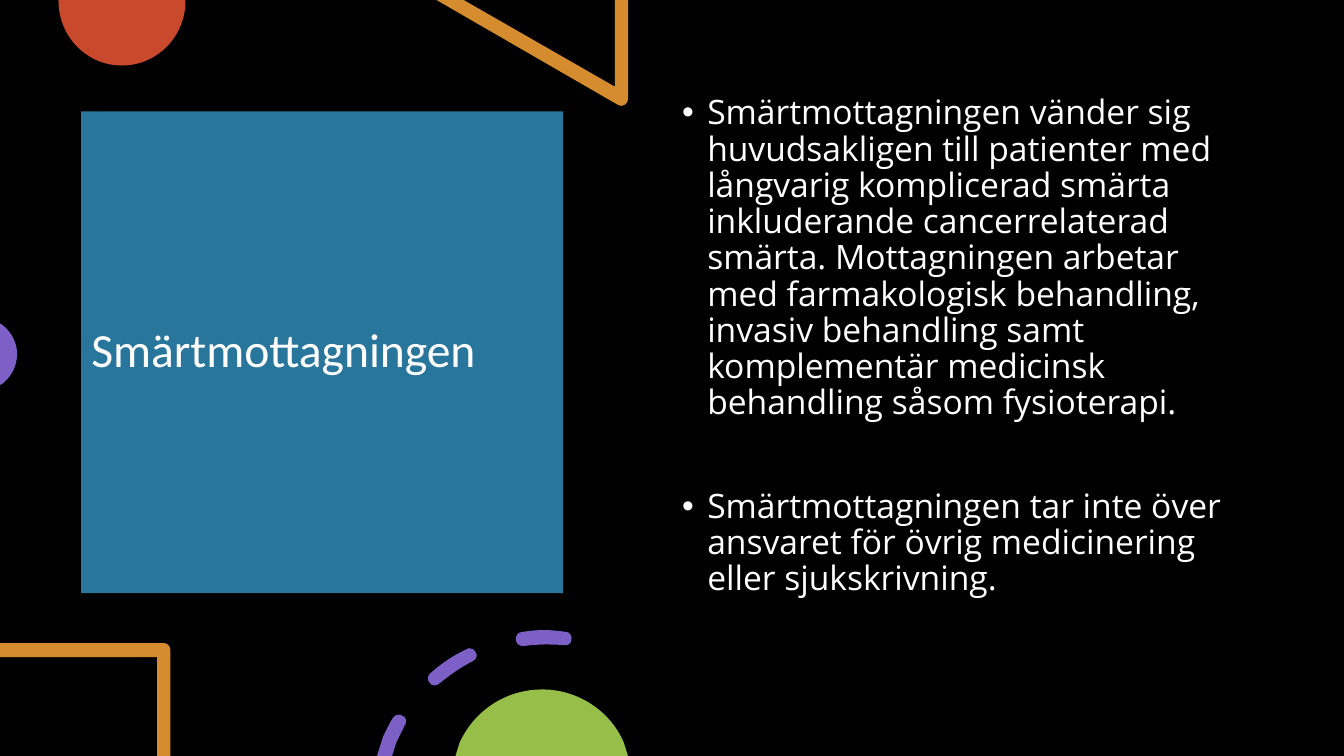
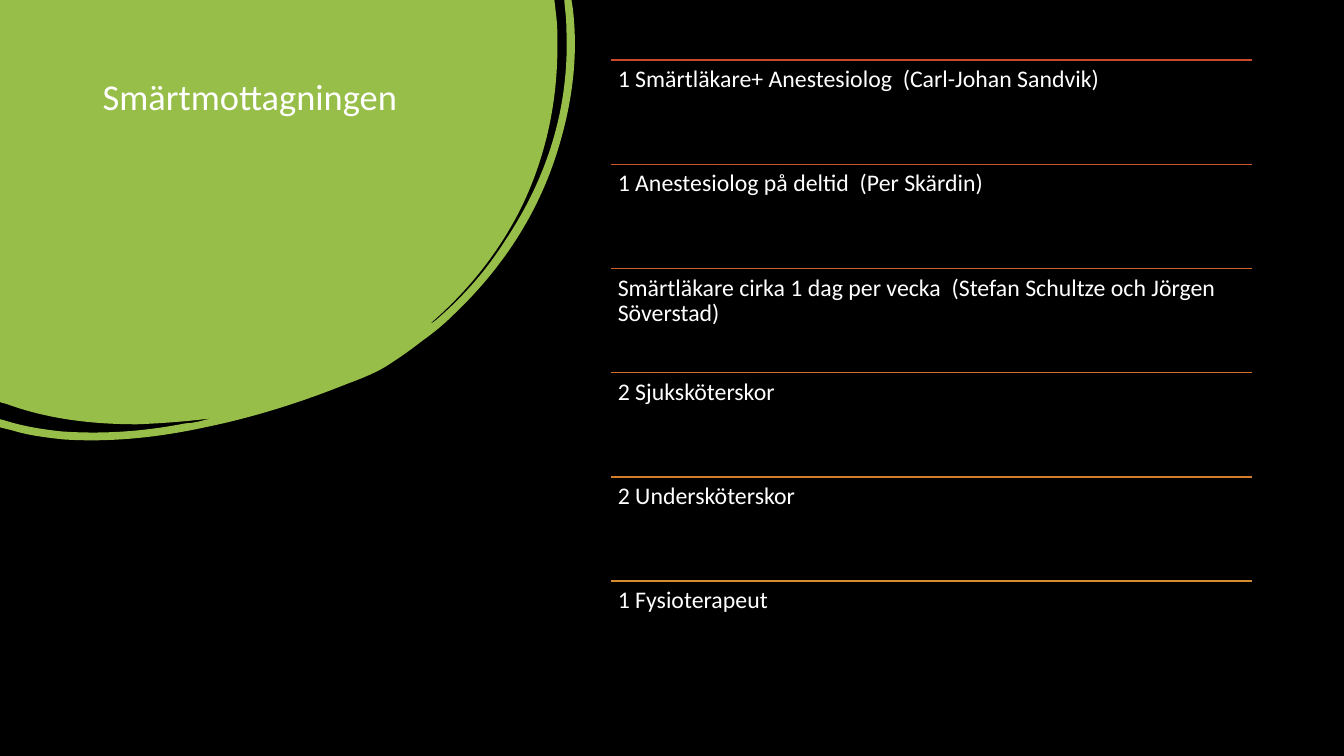
from pptx import Presentation
from pptx.dml.color import RGBColor
from pptx.enum.shapes import MSO_CONNECTOR
from pptx.enum.text import MSO_ANCHOR, MSO_AUTO_SIZE, PP_ALIGN
from pptx.oxml.ns import qn
from pptx.util import Pt
from lxml.etree import SubElement

COLORS = {
    "background": "000000",
    "text": "FFFFFF",
    "blue": "29769D",
    "green": "97BE49",
    "purple": "7C60C6",
    "red": "C9492C",
    "orange": "D58C2E",
    "ember": "CC562C",
    "rust": "CF632C",
    "copper": "D2702C",
    "amber": "D47E2C",
}
TITLE_FONT, BODY_FONT = "Calibri", "Open Sans"
TITLE = "Smärtmottagningen"

INTRODUCTION = [
    "Smärtmottagningen vänder sig huvudsakligen till patienter med långvarig "
    "komplicerad smärta inkluderande cancerrelaterad smärta. Mottagningen arbetar "
    "med farmakologisk behandling, invasiv behandling samt komplementär medicinsk "
    "behandling såsom fysioterapi.",
    "Smärtmottagningen tar inte över ansvaret för övrig medicinering eller sjukskrivning.",
]
STAFF = [
    ("red", "1 Smärtläkare+ Anestesiolog  (Carl-Johan Sandvik)"),
    ("ember", "1 Anestesiolog på deltid  (Per Skärdin)"),
    ("rust", "Smärtläkare cirka 1 dag per vecka  (Stefan Schultze och Jörgen Söverstad)"),
    ("copper", "2 Sjuksköterskor"),
    ("amber", "2 Undersköterskor"),
    ("orange", "1 Fysioterapeut"),
]

# Outlines in points: a pair is a corner, six numbers are a Bézier curve
RED_DISC = [
    (132.5, 0), (41.8, 0), (41.8, 0.7),
    (41.8, 25.9, 61.9, 46.8, 87.1, 46.8), (112.3, 46.8, 132.5, 25.9, 132.5, 0.7),
]
ORANGE_TRIANGLE = [
    (448.6, 0), (439.2, 0), (439.2, 61.9), (331.2, 0), (311.8, 0), (441.4, 74.9),
    (442.1, 75.6, 442.8, 75.6, 443.5, 75.6), (446.4, 75.6, 448.6, 73.4, 448.6, 70.6),
]
PURPLE_DISC = [
    (0, 231.1), (0, 275), (1.4, 274.3),
    (7.9, 269.3, 12.2, 262.1, 12.2, 252.7), (12.2, 244.1, 7.9, 236.9, 1.4, 231.8),
]
ORANGE_FRAME = [
    (117.4, 459.4), (0, 459.4), (0, 469.4), (112.3, 469.4), (112.3, 540),
    (121.7, 540), (121.7, 464.4), (121.7, 461.5, 119.5, 459.4, 117.4, 459.4),
]
LOWER_DASH = [
    (285.8, 510.5), (283.7, 509.8, 282.2, 511.2, 280.8, 512.6),
    (277.9, 517, 275.8, 522, 273.6, 526.3), (269.3, 540), (280.1, 540), (283, 530.6),
    (285.1, 526.3, 287.3, 522, 289.4, 517.7), (290.9, 515.5, 290.2, 511.9, 287.3, 511.2),
]
MIDDLE_DASH = [
    (333.4, 463.7), (324, 468, 315.4, 473.8, 307.4, 481),
    (305.3, 482.4, 305.3, 486, 306.7, 487.4), (307.4, 488.9, 308.9, 489.6, 310.3, 489.6),
    (311.8, 489.6, 313.2, 488.9, 313.9, 488.2), (321.1, 482.4, 329, 476.6, 337.7, 472.3),
    (340.6, 470.9, 341.3, 468, 339.8, 465.8), (339.1, 463.7, 337, 463, 334.8, 463),
]
UPPER_DASH = [
    (388.8, 450), (383, 450, 378, 450.7, 373, 451.4),
    (370.1, 451.4, 367.9, 454.3, 368.6, 457.2), (368.6, 459.4, 370.8, 461.5, 373.7, 461.5),
    (383.8, 460.1, 393.1, 460.1, 403.2, 460.8), (405.4, 461.5, 408.2, 459.4, 408.2, 457.2),
    (409, 454.3, 406.8, 451.4, 404.6, 451.4), (398.9, 450.7, 393.8, 450, 388.8, 450),
]
GREEN_DISC = [
    (387.4, 492.5), (360.7, 492.5, 338.4, 508.3, 328.3, 530.6), (325.4, 540),
    (448.6, 540), (445.7, 530.6), (436.3, 508.3, 413.3, 492.5, 387.4, 492.5),
]
GREEN_BLOB = [
    (0, 0), (396, 0), (397.4, 12.2), (398.2, 18.7, 398.2, 25.9, 398.2, 32.4),
    (398.2, 72.7, 390.2, 110.9, 373, 146.9), (357.1, 179.3, 334.8, 207.4, 307.4, 231.1),
    (308.9, 231.1, 309.6, 229.7, 311, 229), (330.5, 212.4, 347, 193.7, 360.7, 172.1),
    (391, 126.7, 406.8, 77, 404.6, 21.6), (404.6, 15.1, 403.9, 8.6, 403.2, 2.2),
    (403.2, 0), (408.2, 0), (409, 5), (413.3, 38.9, 409, 73.4, 398.2, 108),
    (383.8, 154.1, 357.8, 193, 322.6, 226.1), (316.1, 232.6, 308.9, 238.3, 301.7, 243.4),
    (294.5, 249.1, 287.3, 254.2, 278.6, 259.9), (270, 265.7, 259.2, 270, 247.7, 274.3),
    (215.3, 287.3, 181.4, 298.1, 146.2, 305.3), (113, 312.5, 79.2, 316.1, 45.4, 313.9),
    (32.4, 312.5, 20.2, 311, 8.6, 307.4), (0, 305.3), (0, 299.5), (2.9, 300.2),
    (16.6, 304.6, 30.2, 306.7, 43.9, 308.2), (74.2, 310.3, 103, 308.2, 132.5, 302.4),
    (136.1, 302.4, 139, 301.7, 142.6, 301), (145.4, 300.2, 148.3, 299.5, 151.2, 298.8),
    (133.9, 301, 115.9, 302.4, 97.9, 303.1), (66.2, 303.1, 34.6, 299.5, 5, 288.7),
    (0, 287.3),
]


def color(name):
    return RGBColor.from_string(COLORS[name])


def place(shape, left, top, width, height):
    shape.left, shape.top = Pt(left), Pt(top)
    shape.width, shape.height = Pt(width), Pt(height)


def style_paragraph(para, font, size):
    para.alignment = PP_ALIGN.LEFT
    para.line_spacing = 0.9
    para.space_before = Pt(0)
    for span in para.runs:
        span.font.name = font
        span.font.size = Pt(size)
        span.font.color.rgb = color("text")


def set_title(slide, bounds, size, anchor):
    title = slide.shapes.title
    place(title, *bounds)
    frame = title.text_frame
    frame.text = TITLE
    frame.auto_size = MSO_AUTO_SIZE.NONE
    frame.vertical_anchor = anchor
    style_paragraph(frame.paragraphs[0], TITLE_FONT, size)
    return title


def set_bullets(body, texts, size, gap):
    frame = body.text_frame
    frame.auto_size = MSO_AUTO_SIZE.NONE
    frame.vertical_anchor = MSO_ANCHOR.TOP
    for index, text in enumerate(texts):
        para = frame.add_paragraph() if index else frame.paragraphs[0]
        para.text = text
        style_paragraph(para, BODY_FONT, size)
        para.space_before = Pt(gap if index else 0)
        properties = para._p.get_or_add_pPr()
        properties.set("marL", str(Pt(18)))
        properties.set("indent", str(Pt(-18)))


def bend_segments(shape, parts):
    """Turn the straight segments of curved parts into Bézier curves."""
    segments = list(shape._element.iter(qn("a:lnTo")))
    for segment, part in zip(segments, parts):
        if len(part) == 2:
            continue
        segment.clear()
        curve = SubElement(segment.getparent(), qn("a:cubicBezTo"))
        segment.getparent().replace(segment, curve)
        for x, y in zip(part[::2], part[1::2]):
            SubElement(curve, qn("a:pt"), x=str(Pt(x) - shape.left), y=str(Pt(y) - shape.top))


def add_outline(slide, fill, *outlines):
    builder = None
    for outline in outlines:
        start, *ends = [(Pt(part[-2]), Pt(part[-1])) for part in outline]
        if builder is None:
            builder = slide.shapes.build_freeform(*start)
        else:
            builder.move_to(*start)
        builder.add_line_segments(ends)
    shape = builder.convert_to_shape()
    bend_segments(shape, [part for outline in outlines for part in outline[1:]])
    shape.shadow.inherit = False
    shape.fill.solid()
    shape.fill.fore_color.rgb = color(fill)
    shape.line.fill.background()


def add_rule(slide, left, top, width, line_color):
    rule = slide.shapes.add_connector(
        MSO_CONNECTOR.STRAIGHT, Pt(left), Pt(top), Pt(left + width), Pt(top))
    rule.line.color.rgb = color(line_color)
    rule.line.width = Pt(1)
    SubElement(rule._element.spPr, qn("a:effectLst"))


def add_staff_row(slide, left, top, width, height, line_color, text):
    add_rule(slide, left, top, width, line_color)
    box = slide.shapes.add_textbox(Pt(left), Pt(top), Pt(width), Pt(height))
    frame = box.text_frame
    frame.word_wrap = True
    frame.margin_left = frame.margin_right = Pt(5)
    frame.margin_top = frame.margin_bottom = Pt(5)
    frame.text = text
    style_paragraph(frame.paragraphs[0], TITLE_FONT, 17)


def build_introduction(deck):
    slide = deck.slides.add_slide(deck.slide_layouts[1])
    title = set_title(slide, (58, 79.5, 344.2, 344.2), 34, MSO_ANCHOR.MIDDLE)
    title.fill.solid()
    title.fill.fore_color.rgb = color("blue")
    body = slide.placeholders[1]
    place(body, 480, 64.8, 414, 385.2)
    set_bullets(body, INTRODUCTION, 24, 48)

    # Decorations cut off by the slide edges
    add_outline(slide, "red", RED_DISC)
    add_outline(slide, "orange", ORANGE_TRIANGLE)
    add_outline(slide, "purple", PURPLE_DISC)
    add_outline(slide, "orange", ORANGE_FRAME)
    add_outline(slide, "purple", LOWER_DASH, MIDDLE_DASH, UPPER_DASH)
    add_outline(slide, "green", GREEN_DISC)


def build_staff(deck):
    slide = deck.slides.add_slide(deck.slide_layouts[5])
    add_outline(slide, "green", GREEN_BLOB)
    title = set_title(slide, (66.2, 53, 253.4, 159.8), 26, MSO_ANCHOR.TOP)
    # Bring the title in front of the blob
    slide.shapes._spTree.append(title._element)

    row_height = 74.43
    for index, (line_color, text) in enumerate(STAFF):
        add_staff_row(slide, 436.3, 42.95 + index * row_height, 457.9, row_height,
                      line_color, text)


def main():
    deck = Presentation()
    deck.slide_width, deck.slide_height = Pt(960), Pt(540)
    background = deck.slide_master.background.fill
    background.solid()
    background.fore_color.rgb = color("background")
    build_introduction(deck)
    build_staff(deck)
    deck.save("out.pptx")


if __name__ == "__main__":
    main()
